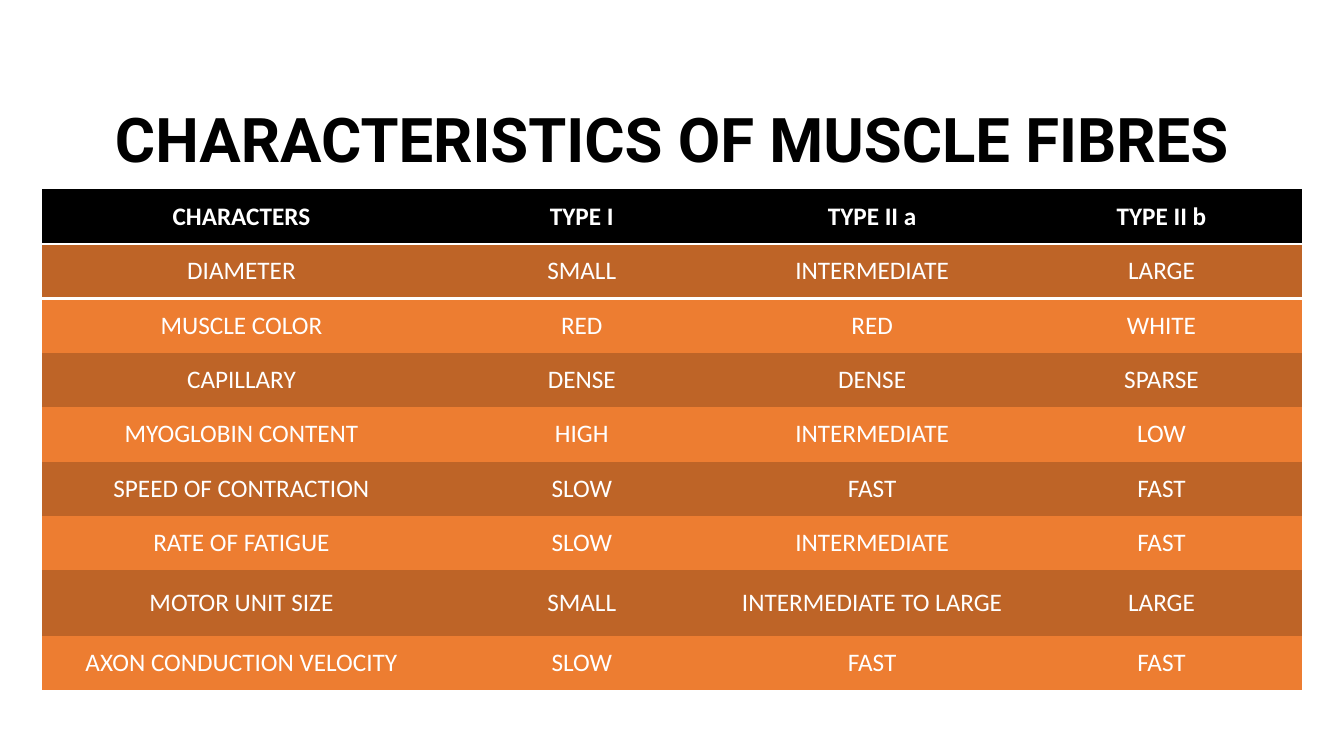
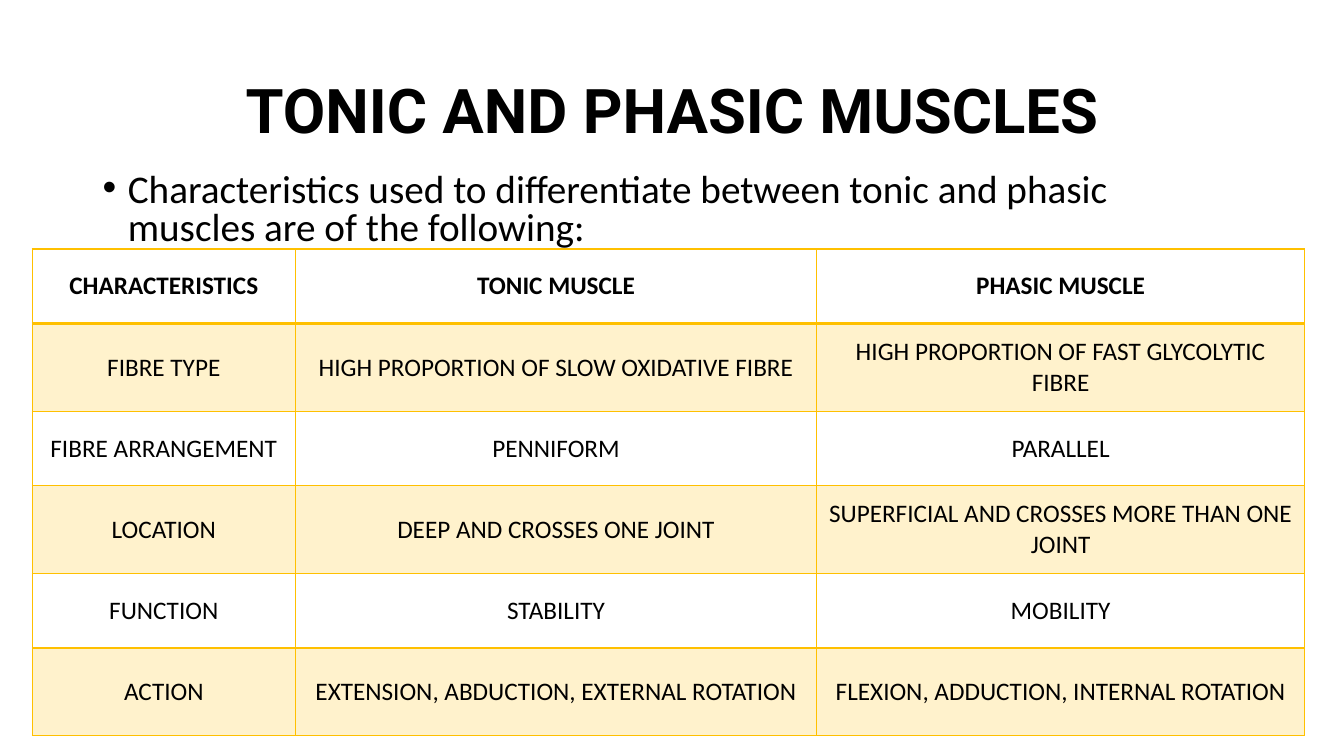
from lxml import etree
from pptx import Presentation
from pptx.dml.color import RGBColor
from pptx.enum.text import MSO_ANCHOR, PP_ALIGN
from pptx.oxml.ns import qn
from pptx.util import Inches, Pt

CENTER, LEFT = PP_ALIGN.CENTER, PP_ALIGN.LEFT
MIDDLE, TOP = MSO_ANCHOR.MIDDLE, MSO_ANCHOR.TOP
BLACK, WHITE = "000000", "FFFFFF"
RUST, ORANGE = "BE6427", "ED7D31"
GOLD, CREAM = "FFC000", "FFF2CC"
NO_GRID_STYLE = "{2D5ABB26-0587-4C30-8999-92F81FD0307C}"

FIBRE_ROWS = [
    ["CHARACTERS", "TYPE I", "TYPE II a", "TYPE II b"],
    ["DIAMETER", "SMALL", "INTERMEDIATE", "LARGE"],
    ["MUSCLE COLOR", "RED", "RED", "WHITE"],
    ["CAPILLARY", "DENSE", "DENSE", "SPARSE"],
    ["MYOGLOBIN CONTENT", "HIGH", "INTERMEDIATE", "LOW"],
    ["SPEED OF CONTRACTION", "SLOW", "FAST", "FAST"],
    ["RATE OF FATIGUE", "SLOW", "INTERMEDIATE", "FAST"],
    ["MOTOR UNIT SIZE", "SMALL", "INTERMEDIATE TO LARGE", "LARGE"],
    ["AXON CONDUCTION VELOCITY", "SLOW", "FAST", "FAST"],
]
MUSCLE_ROWS = [
    ["CHARACTERISTICS", "TONIC MUSCLE", "PHASIC MUSCLE"],
    ["FIBRE TYPE", "HIGH PROPORTION OF SLOW OXIDATIVE FIBRE",
     "HIGH PROPORTION OF FAST GLYCOLYTIC FIBRE"],
    ["FIBRE ARRANGEMENT", "PENNIFORM", "PARALLEL"],
    ["LOCATION", "DEEP AND CROSSES ONE JOINT",
     "SUPERFICIAL AND CROSSES MORE THAN ONE JOINT"],
    ["FUNCTION", "STABILITY", "MOBILITY"],
    ["ACTION", "EXTENSION, ABDUCTION, EXTERNAL ROTATION",
     "FLEXION, ADDUCTION, INTERNAL ROTATION"],
]


def color(hex_string):
    """Turn a hex string into a colour."""
    return RGBColor.from_string(hex_string)


def paint(fill, hex_string):
    """Fill with a solid colour, or with nothing."""
    if hex_string:
        fill.solid()
        fill.fore_color.rgb = color(hex_string)
    else:
        fill.background()


def add_borders(cell, borders):
    """Draw cell borders given as side: (colour, points)."""
    properties = cell._tc.get_or_add_tcPr()
    for side in "LRTB":
        if side in borders:
            hex_string, points = borders[side]
            line = etree.SubElement(properties, qn(f"a:ln{side}"), w=str(Pt(points)))
            solid = etree.SubElement(line, qn("a:solidFill"))
            etree.SubElement(solid, qn("a:srgbClr"), val=hex_string)


class Page:
    """Holds the shared style and the current slide."""

    TITLE = {"name": "Roboto", "size": Pt(44), "bold": True}
    BODY = {"name": "Calibri", "size": Pt(28), "bold": False}
    HEADER = {"name": "Calibri", "size": Pt(18), "bold": True}
    CELL = {"name": "Calibri", "size": Pt(18), "bold": False}

    def __init__(self, deck, title, top):
        """Add a slide with its title."""
        self.slide = deck.slides.add_slide(deck.slide_layouts[5])
        box = self.slide.shapes.title
        place = {"left": 0.92, "top": top, "width": 11.5, "height": 1.45}
        for name, value in place.items():
            setattr(box, name, Inches(value))
        paragraph = self.text(box.text_frame, title, self.TITLE, BLACK, CENTER, MIDDLE)
        paragraph.line_spacing = 0.9

    def text(self, frame, words, style, hex_string, alignment, anchor):
        """Put one styled paragraph into a text frame."""
        frame.word_wrap = True
        frame.vertical_anchor = anchor
        paragraph = frame.paragraphs[0]
        paragraph.alignment = alignment
        span = paragraph.add_run()
        span.text = words
        for name, value in style.items():
            setattr(span.font, name, value)
        span.font.color.rgb = color(hex_string)
        return paragraph

    def bullet(self, words, left, top, width, height):
        """Add a text box with one bulleted paragraph."""
        place = [Inches(value) for value in (left, top, width, height)]
        frame = self.slide.shapes.add_textbox(*place).text_frame
        properties = frame.paragraphs[0]._p.get_or_add_pPr()
        properties.set("marL", str(Inches(0.25)))
        properties.set("indent", str(Inches(-0.25)))
        etree.SubElement(properties, qn("a:buFont"), typeface="Arial")
        etree.SubElement(properties, qn("a:buChar"), char="•")
        paragraph = self.text(frame, words, self.BODY, BLACK, LEFT, TOP)
        paragraph.line_spacing = 0.8

    def table(self, rows, left, top, widths, heights, header_fill, bands,
              ink, rule, grid=None):
        """Add a banded table with a rule under its header and an optional grid."""
        place = [Inches(value) for value in (left, top, sum(widths), sum(heights))]
        frame = self.slide.shapes.add_table(len(rows), len(widths), *place)
        for style_id in frame.element.iter(qn("a:tableStyleId")):
            style_id.text = NO_GRID_STYLE
        table = frame.table
        for column, width in zip(table.columns, widths):
            column.width = Inches(width)
        for index, (row, height, texts) in enumerate(zip(table.rows, heights, rows)):
            row.height = Inches(height)
            borders = dict.fromkeys("LRTB", (grid, 1)) if grid else {}
            if index < 2:
                borders["BT"[index]] = (rule, 2)
            fill = bands[(index - 1) % 2] if index else header_fill
            style = self.CELL if index else self.HEADER
            for cell, words in zip(row.cells, texts):
                cell.vertical_anchor = MIDDLE
                add_borders(cell, borders)
                paint(cell.fill, fill)
                self.text(cell.text_frame, words, style, ink, CENTER, MIDDLE)


def main():
    """Build and save the deck."""
    deck = Presentation()
    deck.slide_width, deck.slide_height = Inches(13.33), Inches(7.5)

    page = Page(deck, "CHARACTERISTICS OF MUSCLE FIBRES", 0.69)
    page.table(FIBRE_ROWS, 0.42, 1.88, [3.95, 2.8, 2.96, 2.78],
               [0.54] * 7 + [0.65, 0.54], BLACK, [RUST, ORANGE], WHITE, WHITE)

    page = Page(deck, "TONIC AND PHASIC MUSCLES", 0.4)
    page.bullet("Characteristics used to differentiate between tonic and phasic "
                "muscles are of the following:", 0.92, 1.67, 11.5, 0.94)
    page.table(MUSCLE_ROWS, 0.32, 2.47, [2.61, 5.17, 4.84],
               [0.74, 0.87] * 3, None, [CREAM, None], BLACK, GOLD, GOLD)

    deck.save("out.pptx")


if __name__ == "__main__":
    main()
